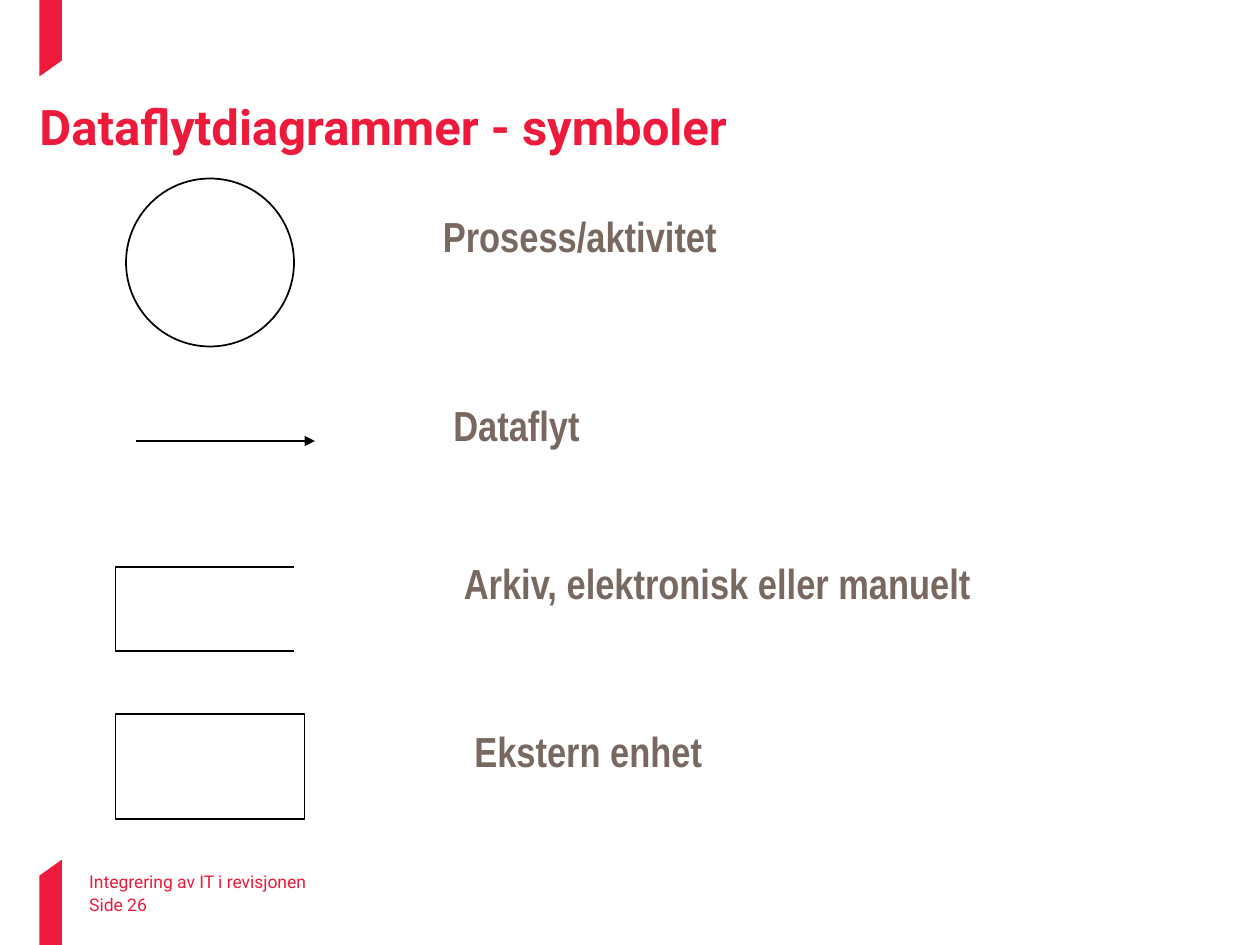
from dataclasses import dataclass

from lxml import etree
from pptx import Presentation
from pptx import util as u
from pptx.dml.color import RGBColor
from pptx.enum import shapes, text
from pptx.oxml.ns import qn


@dataclass(frozen=True)
class Theme:
    red: str = "ED1A3B"
    taupe: str = "786860"
    black: str = "000000"
    head_font: str = "Roboto"
    label_font: str = "Arial Narrow"
    title_size: int = 28
    label_size: int = 24
    footer_size: int = 10
    stroke: float = 1


@dataclass(frozen=True)
class Label:
    words: str
    col: float
    row: float
    cols: float


@dataclass(frozen=True)
class Line:
    col1: float
    row1: float
    col2: float
    row2: float


THEME = Theme()
CELL = u.Inches(1) // 12
COLS, ROWS = 120, 90
BAR_LEFT, BAR_RIGHT = 3.76, 5.9

BARS = [
    [(BAR_RIGHT, 5.76), (BAR_RIGHT, 0), (BAR_LEFT, 0), (BAR_LEFT, 7.27)],
    [(BAR_LEFT, 83.4), (BAR_LEFT, ROWS), (BAR_RIGHT, ROWS), (BAR_RIGHT, 81.86)],
]
LABELS = [
    Label("Prosess/aktivitet", 41, 19.5, 28.8),
    Label("Dataflyt", 42, 37.5, 14.64),
    Label("Arkiv, elektronisk eller manuelt", 43, 52.5, 51.24),
    Label("Ekstern enhet", 44, 68.5, 24.36),
]
ARCHIVE = [Line(11, 54, 11, 62), Line(11, 54, 28, 54), Line(11, 62, 28, 62)]
FLOW = Line(13, 42, 30, 42)


def grid(cells: float) -> int:
    return round(cells * CELL)


def add_text(s, words: str, col: float, row: float, cols: float, rows: float, *,
             font: str, size: int, color: str, bold: bool = False,
             spacing: float = 1.0, inset: bool = False, wrap: bool = True):
    sp = s.shapes.add_textbox(*map(grid, (col, row, cols, rows)))
    tf = sp.text_frame
    tf.word_wrap = wrap
    if not wrap:
        tf.auto_size = text.MSO_AUTO_SIZE.SHAPE_TO_FIT_TEXT
    if not inset:
        tf.margin_left = tf.margin_top = tf.margin_right = tf.margin_bottom = 0
    p = tf.paragraphs[0]
    p.line_spacing = spacing
    r = p.add_run()
    r.text = words
    r.font.name, r.font.size, r.font.bold = font, u.Pt(size), bold
    r.font.color.rgb = RGBColor.from_string(color)
    return sp


def set_line(sp) -> None:
    sp.line.color.rgb = RGBColor.from_string(THEME.black)
    sp.line.width = u.Pt(THEME.stroke)


def add_bar(s, points: list[tuple[float, float]]) -> None:
    start, *rest = [(grid(x), grid(y)) for x, y in points]
    fb = s.shapes.build_freeform(*start)
    fb.add_line_segments(rest, close=True)
    sp = fb.convert_to_shape()
    sp.shadow.inherit = False
    sp.fill.solid()
    sp.fill.fore_color.rgb = RGBColor.from_string(THEME.red)
    sp.line.fill.background()


def add_outline(s, kind, col: float, row: float, cols: float, rows: float) -> None:
    sp = s.shapes.add_shape(kind, *map(grid, (col, row, cols, rows)))
    sp.shadow.inherit = False
    sp.fill.background()
    set_line(sp)


def add_line(parent, line: Line, arrow: bool = False) -> None:
    ends = map(grid, (line.col1, line.row1, line.col2, line.row2))
    sp = parent.shapes.add_connector(shapes.MSO_CONNECTOR.STRAIGHT, *ends)
    set_line(sp)
    if arrow:
        etree.SubElement(sp.line._get_or_add_ln(), qn("a:tailEnd"), type="triangle")
    etree.SubElement(sp._element.spPr, qn("a:effectLst"))


def main() -> None:
    prs = Presentation()
    prs.slide_width, prs.slide_height = grid(COLS), grid(ROWS)
    s = prs.slides.add_slide(prs.slide_layouts[6])

    for points in BARS:
        add_bar(s, points)

    footer = dict(font=THEME.head_font, size=THEME.footer_size, color=THEME.red)
    add_text(s, "Integrering av IT i revisjonen", 8.5, 83, 88, 2.1, **footer)
    add_text(s, "Side 26", 8.5, 85.1, 28, 2.1, **footer)
    add_text(s, "Dataflytdiagrammer - symboler", BAR_LEFT, 8.9, 112.4, 12.7,
             font=THEME.head_font, size=THEME.title_size, color=THEME.red,
             bold=True, spacing=1.05)

    add_outline(s, shapes.MSO_SHAPE.OVAL, 12, 17, 16, 16)
    add_line(s, FLOW, arrow=True)
    archive = s.shapes.add_group_shape()
    for line in ARCHIVE:
        add_line(archive, line)
    add_outline(s, shapes.MSO_SHAPE.RECTANGLE, 11, 68, 18, 10)

    for label in LABELS:
        add_text(s, label.words, label.col, label.row, label.cols, 6,
                 font=THEME.label_font, size=THEME.label_size, color=THEME.taupe,
                 bold=True, inset=True, wrap=False)

    prs.save("out.pptx")


if __name__ == "__main__":
    main()
